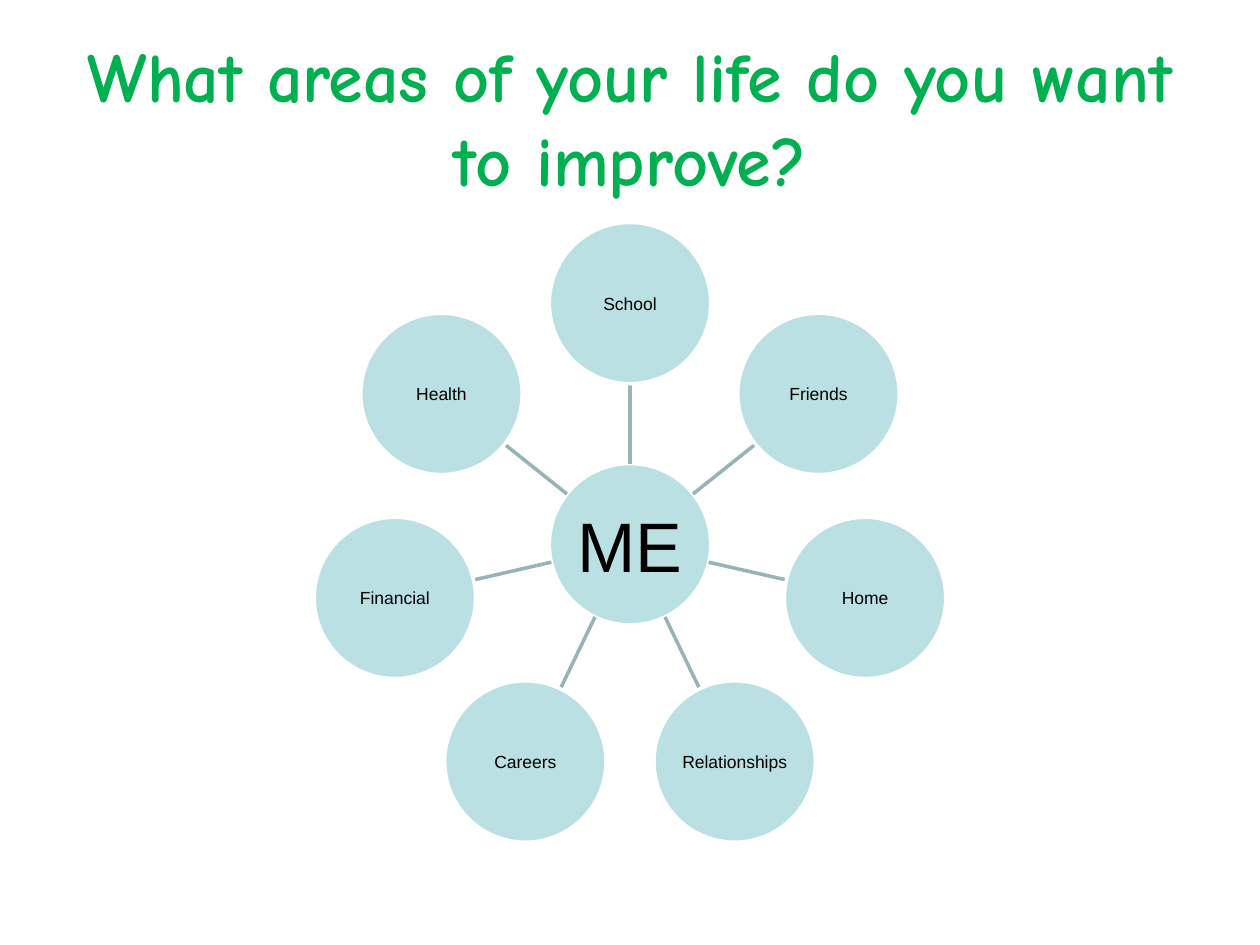
import math

from lxml import etree
from pptx import Presentation
from pptx.dml.color import RGBColor
from pptx.enum import shapes, text
from pptx.oxml.ns import qn
from pptx.util import Pt

GREEN = RGBColor(0x00, 0xB0, 0x50)
PALE_TEAL = RGBColor(0xBB, 0xE0, 0xE3)
GREY_TEAL = RGBColor(0x96, 0xB3, 0xB6)
WHITE = RGBColor(0xFF, 0xFF, 0xFF)
BLACK = RGBColor(0x00, 0x00, 0x00)

AREAS = ["School", "Friends", "Home", "Relationships", "Careers", "Financial", "Health"]
CENTER_X, CENTER_Y = 360, 311
ORBIT = 137.8
RADIUS = 46.1


def write_text(shape, words, font_name, size, color, bold=False):
    frame = shape.text_frame
    frame.word_wrap = True
    frame.vertical_anchor = text.MSO_ANCHOR.MIDDLE
    paragraph = frame.paragraphs[0]
    paragraph.text = words
    paragraph.alignment = text.PP_ALIGN.CENTER
    font = paragraph.font
    font.name, font.size, font.bold = font_name, Pt(size), bold
    font.color.rgb = color


def add_title(slide, words):
    box = slide.shapes.add_textbox(Pt(36), Pt(21.6), Pt(648), Pt(90))
    write_text(box, words, "Comic Neue", 40, GREEN, bold=True)


def point_on_ray(angle, distance):
    """Return the point at a distance from the hub's center, clockwise from the top."""
    return (Pt(CENTER_X + distance * math.sin(angle)),
            Pt(CENTER_Y - distance * math.cos(angle)))


def add_circle(slide, x, y, label, size):
    radius = Pt(RADIUS)
    circle = slide.shapes.add_shape(shapes.MSO_SHAPE.OVAL, x - radius, y - radius,
                                    2 * radius, 2 * radius)
    circle.shadow.inherit = False
    circle.fill.solid()
    circle.fill.fore_color.rgb = PALE_TEAL
    circle.line.color.rgb = WHITE
    circle.line.width = Pt(2)
    frame = circle.text_frame
    frame.margin_left = frame.margin_right = Pt(1)
    frame.margin_top = frame.margin_bottom = Pt(1)
    write_text(circle, label, "Arial", size, BLACK)


def add_spoke(slide, angle):
    spoke = slide.shapes.add_connector(shapes.MSO_CONNECTOR.STRAIGHT,
                                       *point_on_ray(angle, RADIUS),
                                       *point_on_ray(angle, ORBIT - RADIUS))
    spoke.line.color.rgb = GREY_TEAL
    spoke.line.width = Pt(2)
    etree.SubElement(spoke._element.spPr, qn("a:effectLst"))


def main():
    presentation = Presentation()
    presentation.slide_width, presentation.slide_height = Pt(720), Pt(540)
    slide = presentation.slides.add_slide(presentation.slide_layouts[6])
    add_title(slide, "What areas of your life do you want to improve?")
    add_circle(slide, Pt(CENTER_X), Pt(CENTER_Y), "ME", 40)
    for index, area in enumerate(AREAS):
        angle = 2 * math.pi * index / len(AREAS)
        add_spoke(slide, angle)
        add_circle(slide, *point_on_ray(angle, ORBIT), area, 10)
    presentation.save("out.pptx")


if __name__ == "__main__":
    main()
